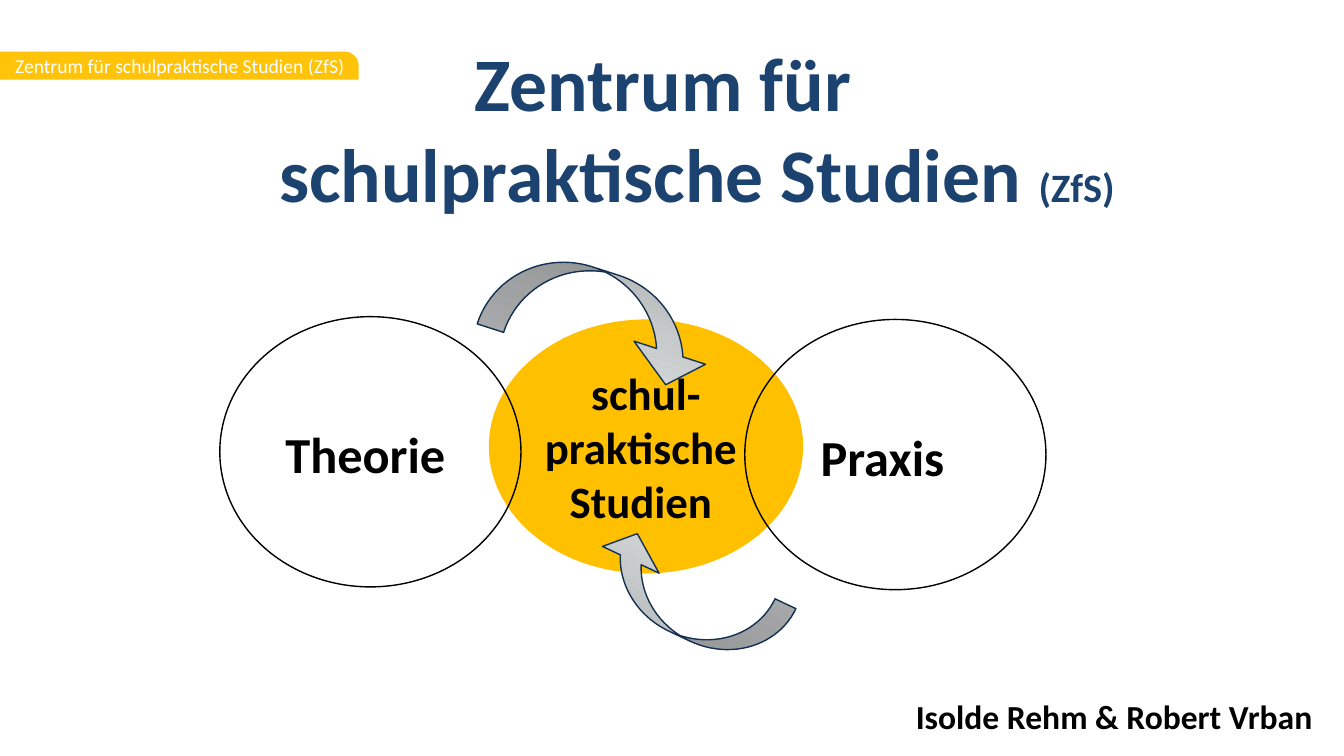
import copy

import pptx
import pptx.dml.color
import pptx.enum.shapes
import pptx.enum.text
import pptx.util

Cm = pptx.util.Cm
Pt = pptx.util.Pt
SHAPE = pptx.enum.shapes.MSO_SHAPE
ALIGN = pptx.enum.text.PP_ALIGN
ANCHOR = pptx.enum.text.MSO_ANCHOR

BLACK, WHITE, NAVY = "000000", "FFFFFF", "1C426F"
GREY_STOPS = ("A3A8AA", "C7CACB", "E4E5E5")


def colour(hex_string):
    return pptx.dml.color.RGBColor.from_string(hex_string)


def lengths(box):
    return [Cm(value) for value in box]


def within(area, left, top, width, height):
    """Box placed relative to the top left corner of an area."""
    return area[0] + left, area[1] + top, width, height


def write(frame, lines, size, hex_string, align, bold=True):
    for index, line in enumerate(lines):
        paragraph = frame.paragraphs[0] if index == 0 else frame.add_paragraph()
        paragraph.text = line
        paragraph.alignment = align
        paragraph.font.name = "Calibri"
        paragraph.font.size = Pt(size)
        paragraph.font.bold = bold
        paragraph.font.color.rgb = colour(hex_string)


def add_text(slide, box, lines, size, hex_string=BLACK, align=ALIGN.CENTER):
    frame = slide.shapes.add_textbox(*lengths(box)).text_frame
    frame.word_wrap = True
    write(frame, lines, size, hex_string, align)
    return frame


def add_figure(slide, kind, box, fill=None, line=None):
    figure = slide.shapes.add_shape(kind, *lengths(box))
    figure.shadow.inherit = False
    if fill:
        figure.fill.solid()
        figure.fill.fore_color.rgb = colour(fill)
    else:
        figure.fill.background()
    if line:
        figure.line.color.rgb = colour(line)
        figure.line.width = Pt(1)
    else:
        figure.line.fill.background()
    return figure


def add_curved_arrow(slide, box, rotation):
    arrow = add_figure(slide, SHAPE.CURVED_RIGHT_ARROW, box, line="153152")
    for index, value in enumerate((0.309, 0.839, 0.354)):
        arrow.adjustments[index] = value
    arrow.rotation = rotation
    arrow._element.spPr.xfrm.set("flipV", "1")
    arrow.fill.gradient()
    arrow.fill.gradient_angle = 0
    first_stop = arrow._element.spPr.find(".//" + pptx.oxml.ns.qn("a:gs"))
    first_stop.addnext(copy.deepcopy(first_stop))
    for index, (stop, grey) in enumerate(zip(arrow.fill.gradient_stops, GREY_STOPS)):
        stop.position = index / 2
        stop.color.rgb = colour(grey)


def add_section_tag(slide, box):
    tag = add_figure(slide, SHAPE.ROUND_1_RECTANGLE, box, fill="FFC40A")
    tag.adjustments[0] = 0.5
    frame = tag.text_frame
    frame.margin_left = frame.margin_top = frame.margin_bottom = 0
    frame.vertical_anchor = ANCHOR.MIDDLE
    write(frame, ["Zentrum für schulpraktische Studien (ZfS)"], 14, WHITE,
          ALIGN.RIGHT, bold=False)


def add_title(slide, box):
    frame = add_text(slide, box, ["Zentrum für ", "schulpraktische Studien "], 54, NAVY)
    frame.margin_left = frame.margin_right = frame.margin_top = frame.margin_bottom = 0
    frame.vertical_anchor = ANCHOR.BOTTOM
    second_line = frame.paragraphs[1]
    second_line._p.get_or_add_pPr().set("marL", str(Cm(1.27)))
    abbreviation = second_line.add_run()
    abbreviation.text = "(ZfS)"
    abbreviation.font.size = Pt(28.8)


def add_theory_practice_diagram(slide, area):
    studies = add_figure(slide, SHAPE.OVAL, within(area, 6.78, 3.02, 7.92, 6.4),
                         fill="FFC000")
    frame = studies.text_frame
    frame.word_wrap = False
    frame.vertical_anchor = ANCHOR.MIDDLE
    write(frame, ["schul-", "praktische ", "Studien "], 32, BLACK, ALIGN.CENTER)

    add_curved_arrow(slide, within(area, 10.82, 7.44, 1.88, 5.21), 295.3)
    add_curved_arrow(slide, within(area, 8.53, 0, 2.26, 5.94), 107.9)

    for word, left, top, label_left, label_width in (
            ("Theorie", 0, 2.95, 0.38, 6.58), ("Praxis", 13.23, 3.02, 13.92, 5.56)):
        add_figure(slide, SHAPE.OVAL, within(area, left, top, 7.59, 6.81), line=BLACK)
        add_text(slide, within(area, label_left, top + 2.57, label_width, 1.63),
                 [word], 36)


def main():
    presentation = pptx.Presentation()
    presentation.slide_width = Cm(33.87)
    presentation.slide_height = Cm(19.05)
    slide = presentation.slides.add_slide(presentation.slide_layouts[6])
    add_section_tag(slide, (0, 1.3, 9.04, 0.71))
    add_title(slide, (4.23, 0.56, 25.4, 4.93))
    add_text(slide, (22.83, 17.42, 10.85, 1.27), ["Isolde Rehm & Robert Vrban"],
             24, align=ALIGN.LEFT)
    add_theory_practice_diagram(slide, (5.54, 5.03, 20.82, 12.65))
    presentation.save("out.pptx")


if __name__ == "__main__":
    main()
